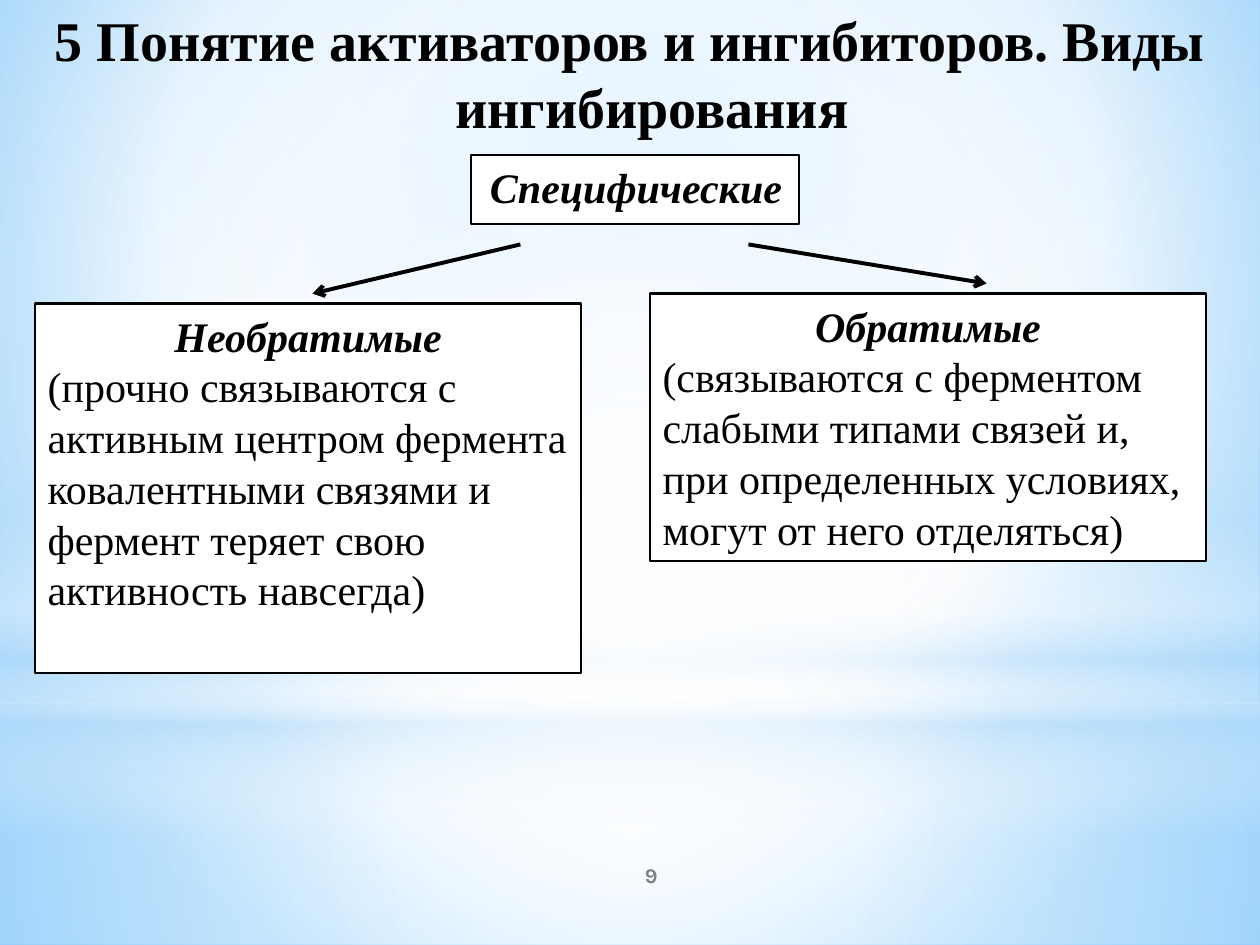
"""Build the slide on specific enzyme inhibitors and their two kinds."""
from pptx import Presentation
from pptx.dml.color import RGBColor
from pptx.enum.shapes import MSO_CONNECTOR, MSO_SHAPE
from pptx.enum.text import MSO_ANCHOR, MSO_AUTO_SIZE, PP_ALIGN
from pptx.oxml import parse_xml
from pptx.oxml.ns import nsdecls, qn
from pptx.util import Inches, Pt

BLACK = RGBColor(0, 0, 0)
WHITE = RGBColor(255, 255, 255)
GRAY = RGBColor(128, 128, 128)
PALE = RGBColor(0xB4, 0xDC, 0xFA)
SKY = RGBColor(0x9E, 0xD5, 0xFF)
BLUE = RGBColor(0x5B, 0xB9, 0xFF)
SERIF = "Times New Roman"

TITLE = "5 Понятие активаторов и ингибиторов. Виды ингибирования"
PAGE_NUMBER = "9"
BOXES = [
    ((3.74, 1.23, 2.6, 0.55), "Специфические", None),
    ((0.28, 2.41, 4.33, 2.93), "Необратимые",
     "(прочно связываются с активным центром фермента ковалентными связями "
     "и фермент теряет свою активность навсегда)"),
    ((5.16, 2.33, 4.41, 2.12), "Обратимые",
     "(связываются с ферментом слабыми типами связей и, при определенных "
     "условиях, могут от него отделяться)"),
]
ARROWS = [(4.13, 1.94, 2.48, 2.33), (5.94, 1.94, 7.83, 2.25)]

CENTER = (50, 50, 50, 50)
BACKGROUND = [(0, SKY, 100), (60, WHITE, 100), (100, BLUE, 100)]
LAYERS = [
    (MSO_SHAPE.RECTANGLE, (0, 5.58, 10, 1.92), CENTER,
     [(0, WHITE, 91), (37, WHITE, 76), (100, PALE, 79)]),
    (MSO_SHAPE.RECTANGLE, (0, 0, 10, 5.58), CENTER,
     [(0, WHITE, 89), (48, WHITE, 62), (100, PALE, 79)]),
    (MSO_SHAPE.RECTANGLE, (0, 4.12, 10, 2.5), None,
     [(0, WHITE, 0), (29, WHITE, 30), (45, PALE, 40),
      (55, WHITE, 26), (65, PALE, 60), (100, WHITE, 0)]),
    (MSO_SHAPE.OVAL, (0, 1.75, 10, 5.58), CENTER,
     [(0, WHITE, 100), (56, WHITE, 0)]),
]


def set_gradient(fill, element, stops, focus):
    fill.solid()
    solid = next(element.iter(qn("a:solidFill")))
    marks = "".join(
        f'<a:gs pos="{pos * 1000}"><a:srgbClr val="{color}">'
        f'<a:alpha val="{alpha * 1000}"/></a:srgbClr></a:gs>'
        for pos, color, alpha in stops)
    if focus:
        sides = " ".join(f'{side}="{value * 1000}"' for side, value in zip("ltrb", focus))
        direction = f'<a:path path="circle"><a:fillToRect {sides}/></a:path>'
    else:
        direction = '<a:lin ang="5400000" scaled="0"/>'
    solid.getparent().replace(solid, parse_xml(
        f'<a:gradFill rotWithShape="1" {nsdecls("a")}><a:gsLst>{marks}</a:gsLst>'
        f'{direction}</a:gradFill>'))


def write(para, text, size=24, font=SERIF, color=BLACK, bold=False, italic=False,
          align=PP_ALIGN.LEFT, margin=0, indent=0):
    para.alignment = align
    para.line_spacing = Pt(round(size * 1.2))
    para.space_before = Pt(0)
    properties = para._p.get_or_add_pPr()
    properties.set("marL", str(Inches(margin)))
    properties.set("indent", str(Inches(indent)))
    span = para.add_run()
    span.text = text
    span.font.size, span.font.name = Pt(size), font
    span.font.bold, span.font.italic = bold, italic
    span.font.color.rgb = color


def prepare(frame, anchor=MSO_ANCHOR.TOP):
    frame.word_wrap = True
    frame.auto_size = MSO_AUTO_SIZE.NONE
    frame.vertical_anchor = anchor
    return frame.paragraphs[0]


def add_layer(page, kind, place, focus, stops):
    layer = page.shapes.add_shape(kind, *map(Inches, place))
    layer.shadow.inherit = False
    layer.line.fill.background()
    set_gradient(layer.fill, layer.element.spPr, stops, focus)
    page.shapes.title.element.addprevious(layer.element)


def add_box(page, place, heading, detail):
    box = page.shapes.add_shape(MSO_SHAPE.RECTANGLE, *map(Inches, place))
    box.shadow.inherit = False
    box.fill.solid()
    box.fill.fore_color.rgb = WHITE
    box.line.color.rgb = BLACK
    box.line.width = Pt(1.25)
    para = prepare(box.text_frame)
    if detail:
        write(para, heading, bold=True, italic=True, align=PP_ALIGN.CENTER)
        write(box.text_frame.add_paragraph(), detail)
    else:
        write(para, heading, bold=True, italic=True, margin=0.25, indent=-0.2)


def add_arrow(page, ends):
    arrow = page.shapes.add_connector(MSO_CONNECTOR.STRAIGHT, *map(Inches, ends))
    arrow.line.color.rgb = BLACK
    arrow.line.width = Pt(2.25)
    arrow.line._get_or_add_ln().append(
        parse_xml(f'<a:tailEnd type="arrow" {nsdecls("a")}/>'))
    arrow.element.spPr.append(parse_xml(f'<a:effectLst {nsdecls("a")}/>'))


def main():
    deck = Presentation()
    deck.slide_width, deck.slide_height = Inches(10), Inches(7.5)
    page = deck.slides.add_slide(deck.slide_layouts[5])
    set_gradient(page.background.fill, page.element, BACKGROUND, (20, 10, 20, 60))
    for layer in LAYERS:
        add_layer(page, *layer)

    title = page.shapes.title
    title.left, title.top = Inches(0), Inches(0)
    title.width, title.height = Inches(10), Inches(1.25)
    write(prepare(title.text_frame), TITLE, size=32, bold=True,
          align=PP_ALIGN.CENTER, margin=0.35, indent=-0.35)

    for box in BOXES:
        add_box(page, *box)
    for ends in ARROWS:
        add_arrow(page, ends)

    number = page.shapes.add_textbox(*map(Inches, (4.17, 6.75, 2, 0.4)))
    write(prepare(number.text_frame, MSO_ANCHOR.MIDDLE), PAGE_NUMBER, size=12,
          font="Karla", color=GRAY, bold=True, align=PP_ALIGN.CENTER)
    deck.save("out.pptx")


if __name__ == "__main__":
    main()
